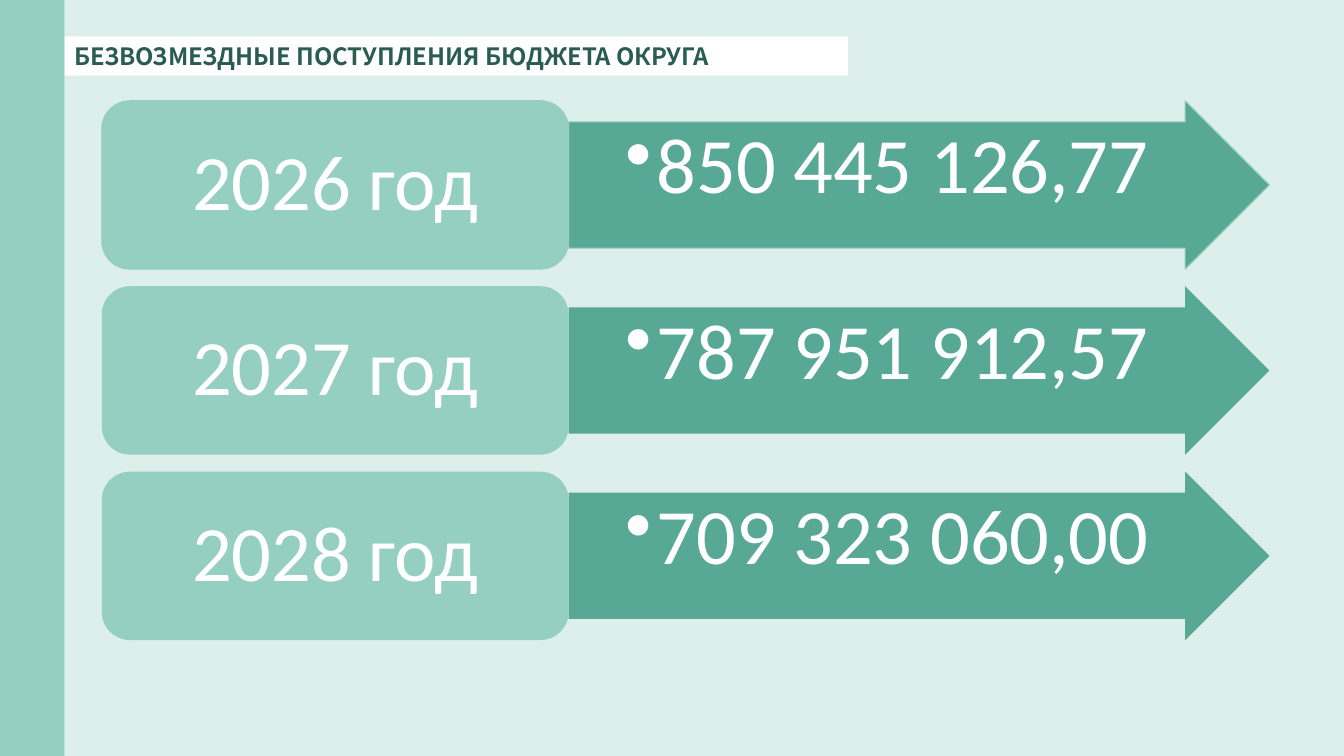
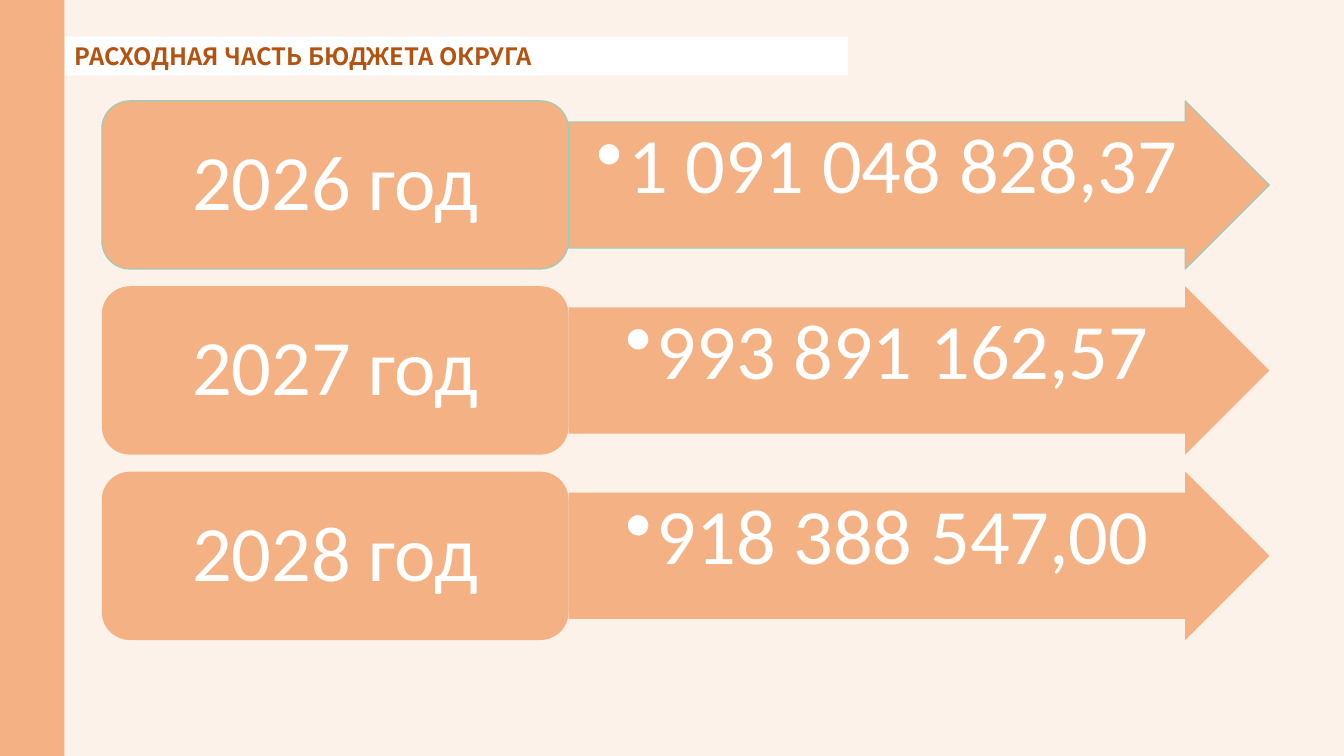
from pptx import Presentation
from pptx.dml.color import RGBColor
from pptx.enum.shapes import MSO_SHAPE
from pptx.enum.text import MSO_ANCHOR, MSO_AUTO_SIZE, PP_ALIGN
from pptx.oxml.ns import qn
from pptx.util import Inches, Pt
from lxml.etree import SubElement

YEARS = ["2026 год", "2027 год", "2028 год"]
SLIDES = [
    {
        "title": "БЕЗВОЗМЕЗДНЫЕ ПОСТУПЛЕНИЯ БЮДЖЕТА ОКРУГА",
        "amounts": ["850 445 126,77", "787 951 912,57", "709 323 060,00"],
        "background": "DCEFEA",
        "title_color": "2A5C50",
        "accent": "95CFC1",
        "arrow": "49A18C",
        "arrow_opacity": 90,
    },
    {
        "title": "РАСХОДНАЯ ЧАСТЬ БЮДЖЕТА ОКРУГА",
        "amounts": ["1 091 048 828,37", "993 891 162,57", "918 388 547,00"],
        "background": "FDF2EA",
        "title_color": "B45210",
        "accent": "F4B183",
        "arrow": "F4B183",
        "arrow_opacity": 100,
    },
]

WHITE = "FFFFFF"
OUTLINE = "95CFC1"
TITLE_FONT = "Noto Sans CJK JP"
BODY_FONT = "Calibri"

BAND_WIDTH = 0.64
YEAR_LEFT, YEAR_WIDTH = 1.01, 4.63
ARROW_LEFT, ARROW_WIDTH = YEAR_LEFT + YEAR_WIDTH, 6.95
ROW_TOP, ROW_HEIGHT, ROW_STEP = 1, 1.67, 1.84


def color(value):
    return RGBColor.from_string(value)


def add_block(slide, kind, left, top, width, height, fill, outline=None):
    shape = slide.shapes.add_shape(
        kind, Inches(left), Inches(top), Inches(width), Inches(height)
    )
    shape.shadow.inherit = False
    shape.fill.solid()
    shape.fill.fore_color.rgb = color(fill)
    if outline:
        shape.line.color.rgb = color(outline)
        shape.line.width = Pt(0.75)
    else:
        shape.line.fill.background()
    return shape


def set_opacity(shape, percent):
    fill_color = shape.fill._xPr.find(qn("a:solidFill"))[0]
    SubElement(fill_color, qn("a:alpha"), val=str(percent * 1000))


def add_bullet(paragraph, indent):
    properties = paragraph._p.get_or_add_pPr()
    properties.set("marL", str(Inches(indent)))
    properties.set("indent", str(-Inches(indent)))
    SubElement(properties, qn("a:buChar"), char="•")


def set_text(shape, text, font_name, size, text_color, anchor, alignment,
             insets=(0.1, 0.05), bold=False, bullet_indent=None):
    frame = shape.text_frame
    frame.word_wrap = True
    frame.vertical_anchor = anchor
    frame.margin_left = frame.margin_right = Inches(insets[0])
    frame.margin_top = frame.margin_bottom = Inches(insets[1])
    frame.text = text
    paragraph = frame.paragraphs[0]
    paragraph.alignment = alignment
    if bullet_indent:
        add_bullet(paragraph, bullet_indent)
    font = paragraph.runs[0].font
    font.name = font_name
    font.size = Pt(size)
    font.bold = bold
    font.color.rgb = color(text_color)
    return paragraph


def add_frame(slide, content):
    slide.background.fill.solid()
    slide.background.fill.fore_color.rgb = color(content["background"])
    title = add_block(slide, MSO_SHAPE.RECTANGLE, BAND_WIDTH, 0.36, 7.77, 0.39, WHITE)
    set_text(title, content["title"], TITLE_FONT, 17, content["title_color"],
             MSO_ANCHOR.TOP, PP_ALIGN.LEFT, bold=True)
    title.text_frame.auto_size = MSO_AUTO_SIZE.SHAPE_TO_FIT_TEXT
    add_block(slide, MSO_SHAPE.RECTANGLE, 0, 0, BAND_WIDTH, 7.5, content["accent"])


def add_row(slide, content, index):
    top = ROW_TOP + index * ROW_STEP
    outline = OUTLINE if index == 0 else None

    arrow = add_block(slide, MSO_SHAPE.RIGHT_ARROW, ARROW_LEFT, top,
                      ARROW_WIDTH, ROW_HEIGHT, content["arrow"], outline)
    arrow.adjustments[0] = 0.75
    arrow.adjustments[1] = 0.5
    if content["arrow_opacity"] < 100:
        set_opacity(arrow, content["arrow_opacity"])
    amount = set_text(arrow, content["amounts"][index], BODY_FONT, 56, WHITE,
                      MSO_ANCHOR.TOP, PP_ALIGN.CENTER, (0.04, 0.04), bullet_indent=0.31)
    amount.line_spacing = 0.9

    year_box = add_block(slide, MSO_SHAPE.ROUNDED_RECTANGLE, YEAR_LEFT, top,
                         YEAR_WIDTH, ROW_HEIGHT, content["accent"], outline)
    year = set_text(year_box, YEARS[index], BODY_FONT, 56, WHITE,
                    MSO_ANCHOR.MIDDLE, PP_ALIGN.CENTER, (0.23, 0.12))
    year.line_spacing = 0.9


def main():
    presentation = Presentation()
    presentation.slide_width = Inches(13.33)
    presentation.slide_height = Inches(7.5)
    for content in SLIDES:
        slide = presentation.slides.add_slide(presentation.slide_layouts[6])
        add_frame(slide, content)
        for index in range(len(YEARS)):
            add_row(slide, content, index)
    presentation.save("out.pptx")


if __name__ == "__main__":
    main()
